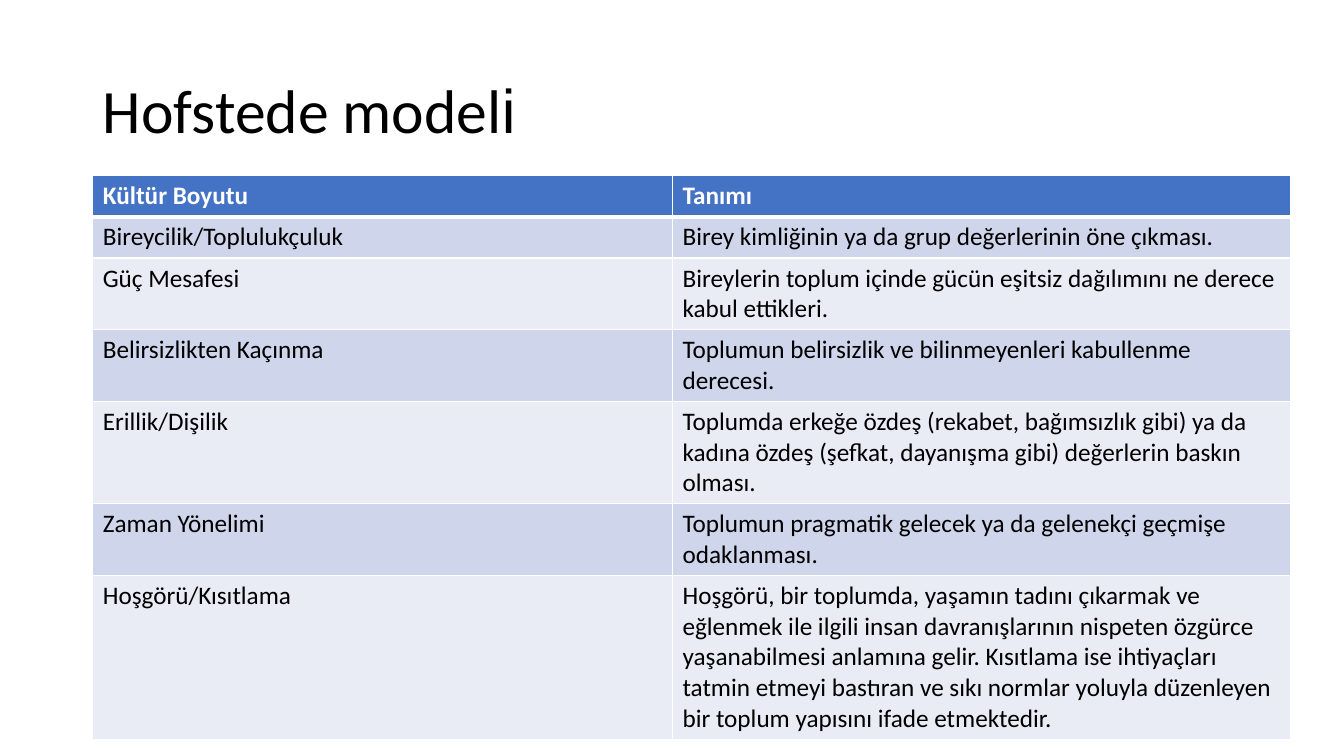
from dataclasses import dataclass

from lxml.etree import SubElement
from pptx import Presentation
from pptx.dml.color import RGBColor
from pptx.enum.text import MSO_ANCHOR, MSO_AUTO_SIZE, PP_ALIGN
from pptx.oxml.ns import qn
from pptx.util import Inches, Pt


@dataclass(frozen=True)
class Theme:
    font: str = "Calibri"
    accent_font: str = "Arial"
    title_size: int = 44
    table_size: int = 18
    text: str = "000000"
    header_text: str = "FFFFFF"
    header_fill: str = "4472C4"
    band_fills: tuple = ("CFD5EA", "E9EBF5")
    border: str = "FFFFFF"
    border_width: int = 1
    header_border_width: int = 3


THEME = Theme()

DIMENSIONS = [
    ("Kültür Boyutu", "Tanımı"),
    ("Bireycilik/Toplulukçuluk", "Birey kimliğinin ya da grup değerlerinin öne çıkması."),
    ("Güç Mesafesi",
     "Bireylerin toplum içinde gücün eşitsiz dağılımını ne derece kabul ettikleri."),
    ("Belirsizlikten Kaçınma", "Toplumun belirsizlik ve bilinmeyenleri kabullenme derecesi."),
    ("Erillik/Dişilik",
     "Toplumda erkeğe özdeş (rekabet, bağımsızlık gibi) ya da kadına özdeş "
     "(şefkat, dayanışma gibi) değerlerin baskın olması."),
    ("Zaman Yönelimi", "Toplumun pragmatik gelecek ya da gelenekçi geçmişe odaklanması."),
    ("Hoşgörü/Kısıtlama",
     "Hoşgörü, bir toplumda, yaşamın tadını çıkarmak ve eğlenmek ile ilgili insan "
     "davranışlarının nispeten özgürce yaşanabilmesi anlamına gelir. Kısıtlama ise "
     "ihtiyaçları tatmin etmeyi bastıran ve sıkı normlar yoluyla düzenleyen bir toplum "
     "yapısını ifade etmektedir."),
]


def add_title(page, left, top, width, height):
    title = page.shapes.title
    title.left, title.top = Inches(left), Inches(top)
    title.width, title.height = Inches(width), Inches(height)
    frame = title.text_frame
    frame.word_wrap = True
    frame.auto_size = MSO_AUTO_SIZE.NONE
    frame.vertical_anchor = MSO_ANCHOR.MIDDLE
    para = frame.paragraphs[0]
    para.alignment = PP_ALIGN.LEFT
    para.line_spacing = 0.9
    para.font.size = Pt(THEME.title_size)
    para.font.color.rgb = RGBColor.from_string(THEME.text)
    for text, font in (("Hofstede model", THEME.font), ("i", THEME.accent_font)):
        span = para.add_run()
        span.text = text
        span.font.name = font


def set_borders(cell, row):
    top = THEME.header_border_width if row == 1 else THEME.border_width
    bottom = THEME.header_border_width if row == 0 else THEME.border_width
    widths = {"lnL": THEME.border_width, "lnR": THEME.border_width, "lnT": top, "lnB": bottom}
    properties = cell._tc.get_or_add_tcPr()
    for side, width in widths.items():
        line = SubElement(properties, qn(f"a:{side}"), w=str(Pt(width)))
        fill = SubElement(line, qn("a:solidFill"))
        SubElement(fill, qn("a:srgbClr"), val=THEME.border)


def format_cell(cell, text, row):
    is_header = row == 0
    fill = THEME.header_fill if is_header else THEME.band_fills[(row - 1) % 2]
    set_borders(cell, row)
    cell.fill.solid()
    cell.fill.fore_color.rgb = RGBColor.from_string(fill)
    cell.margin_left = cell.margin_right = Inches(0.1)
    cell.margin_top = cell.margin_bottom = Inches(0.05)
    cell.text = text
    font = cell.text_frame.paragraphs[0].font
    font.name = THEME.font
    font.size = Pt(THEME.table_size)
    font.bold = is_header
    font.color.rgb = RGBColor.from_string(THEME.header_text if is_header else THEME.text)


def add_dimension_table(page, left, top, column_widths, row_height):
    table = page.shapes.add_table(
        len(DIMENSIONS), len(column_widths), Inches(left), Inches(top),
        Inches(sum(column_widths)), Inches(row_height * len(DIMENSIONS))).table
    for column, width in zip(table.columns, column_widths):
        column.width = Inches(width)
    for row, texts in enumerate(DIMENSIONS):
        table.rows[row].height = Inches(row_height)
        for column, text in enumerate(texts):
            format_cell(table.cell(row, column), text, row)


def main():
    deck = Presentation()
    deck.slide_width, deck.slide_height = Inches(13.33), Inches(7.5)
    page = deck.slides.add_slide(deck.slide_layouts[5])
    add_title(page, 0.92, 0.4, 11.5, 1.45)
    add_dimension_table(page, 0.92, 1.74, (5.75, 6.13), 0.41)
    deck.save("out.pptx")


if __name__ == "__main__":
    main()
